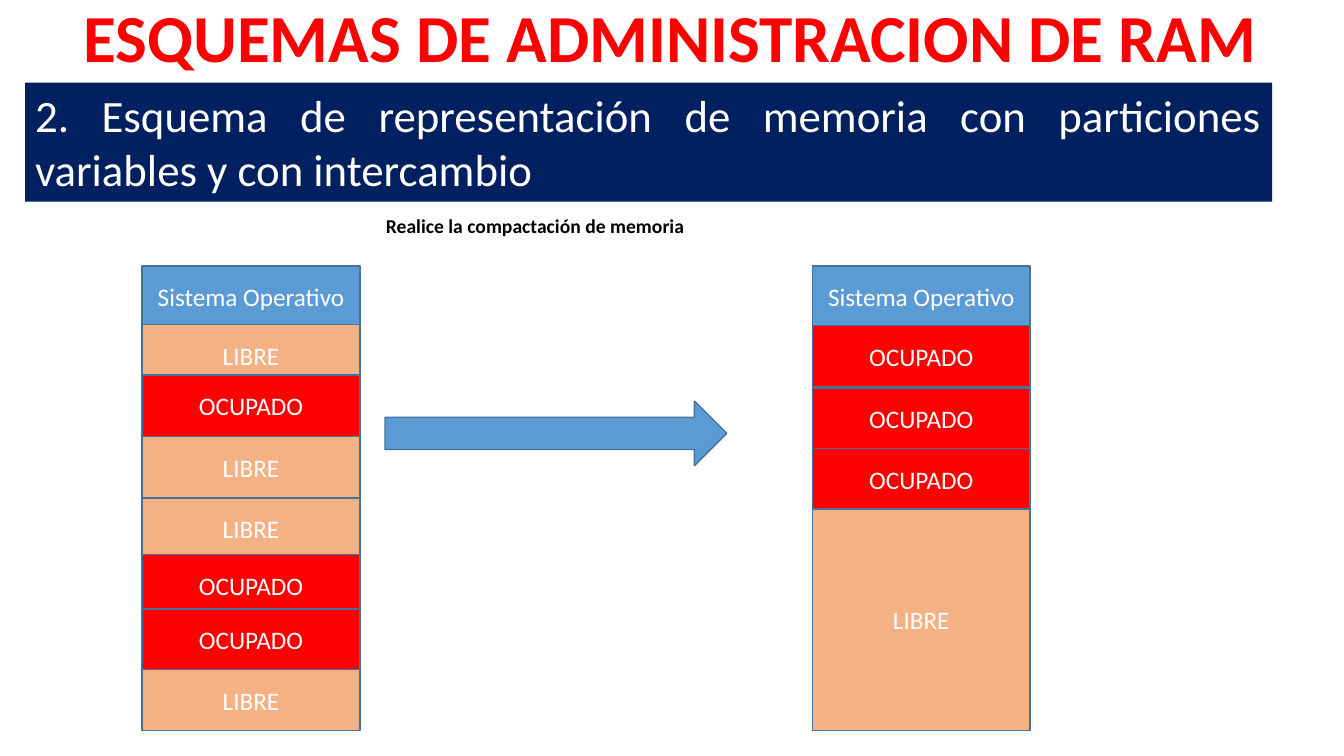
from dataclasses import dataclass

from pptx import Presentation
from pptx import util as u
from pptx.dml.color import RGBColor
from pptx.enum import shapes, text

COLUMNS, ROWS = 160, 90


@dataclass(frozen=True)
class Theme:
    font: str = "Calibri"
    red: str = "FF0000"
    navy: str = "002060"
    blue: str = "5B9BD5"
    orange: str = "F4B183"
    outline: str = "43739E"
    white: str = "FFFFFF"
    black: str = "000000"
    title_size: int = 48
    banner_size: int = 32
    caption_size: int = 14
    block_size: int = 18


class MemorySlide:
    def __init__(self, deck, theme):
        self.theme = theme
        self.slide = deck.slides.add_slide(deck.slide_layouts[6])
        self.column = deck.slide_width / COLUMNS
        self.row = deck.slide_height / ROWS

    def place(self, left, top, width, height):
        """Turn grid columns and rows into slide lengths."""
        return (round(left * self.column), round(top * self.row),
                round(width * self.column), round(height * self.row))

    def add_words(self, holder, words, size, color, bold=False,
                  align=text.PP_ALIGN.LEFT, anchor=text.MSO_ANCHOR.TOP):
        frame = holder.text_frame
        frame.word_wrap = True
        frame.vertical_anchor = anchor
        paragraph = frame.paragraphs[0]
        paragraph.alignment = align
        run = paragraph.add_run()
        run.text = words
        run.font.name = self.theme.font
        run.font.size = u.Pt(size)
        run.font.bold = bold
        run.font.color.rgb = RGBColor.from_string(color)

    def heading(self, area, words, size, color):
        heading = self.slide.shapes.add_textbox(*self.place(*area))
        self.add_words(heading, words, size, color, bold=True)

    def panel(self, area, fill, outline=None, kind=shapes.MSO_SHAPE.RECTANGLE):
        panel = self.slide.shapes.add_shape(kind, *self.place(*area))
        panel.shadow.inherit = False
        panel.fill.solid()
        panel.fill.fore_color.rgb = RGBColor.from_string(fill)
        if outline:
            panel.line.color.rgb = RGBColor.from_string(outline)
            panel.line.width = u.Pt(1)
        else:
            panel.line.fill.background()
        return panel

    def banner(self, area, words):
        banner = self.panel(area, self.theme.navy)
        self.add_words(banner, words, self.theme.banner_size,
                       self.theme.white, align=text.PP_ALIGN.JUSTIFY)

    def arrow(self, area):
        self.panel(area, self.theme.blue, self.theme.outline,
                   shapes.MSO_SHAPE.RIGHT_ARROW)

    def memory(self, left, blocks, width=25.92, block_height=7.32):
        """Stack blocks of (top row, state, optional height)."""
        fills = {"Sistema Operativo": self.theme.blue,
                 "LIBRE": self.theme.orange,
                 "OCUPADO": self.theme.red}
        for top, state, *height in blocks:
            area = (left, top, width, height[0] if height else block_height)
            block = self.panel(area, fills[state], self.theme.outline)
            self.add_words(block, state, self.theme.block_size,
                           self.theme.white, align=text.PP_ALIGN.CENTER,
                           anchor=text.MSO_ANCHOR.MIDDLE)


def main():
    deck = Presentation()
    deck.slide_width, deck.slide_height = u.Inches(13.33), u.Inches(7.5)
    theme = Theme()
    slide = MemorySlide(deck, theme)

    slide.heading((8.76, -1.2, 145.68, 10.92),
                  "ESQUEMAS DE ADMINISTRACION DE RAM",
                  theme.title_size, theme.red)
    slide.banner((3, 9.84, 148.44, 14.16),
                 "2. Esquema de representación de memoria con particiones "
                 "variables y con intercambio")
    slide.heading((44.76, 24.84, 64.92, 4.08),
                  "Realice la compactación de memoria",
                  theme.caption_size, theme.black)

    slide.memory(16.92, [
        (31.68, "Sistema Operativo"),
        (38.64, "LIBRE"),
        (44.64, "OCUPADO"),
        (51.96, "LIBRE"),
        (59.28, "LIBRE"),
        (66, "OCUPADO"),
        (72.48, "OCUPADO"),
        (79.68, "LIBRE"),
    ])
    slide.arrow((45.84, 47.76, 40.68, 7.68))
    slide.memory(96.72, [
        (31.68, "Sistema Operativo"),
        (38.76, "OCUPADO"),
        (46.2, "OCUPADO"),
        (53.4, "OCUPADO"),
        (60.6, "LIBRE", 26.4),
    ])
    deck.save("out.pptx")


if __name__ == "__main__":
    main()
